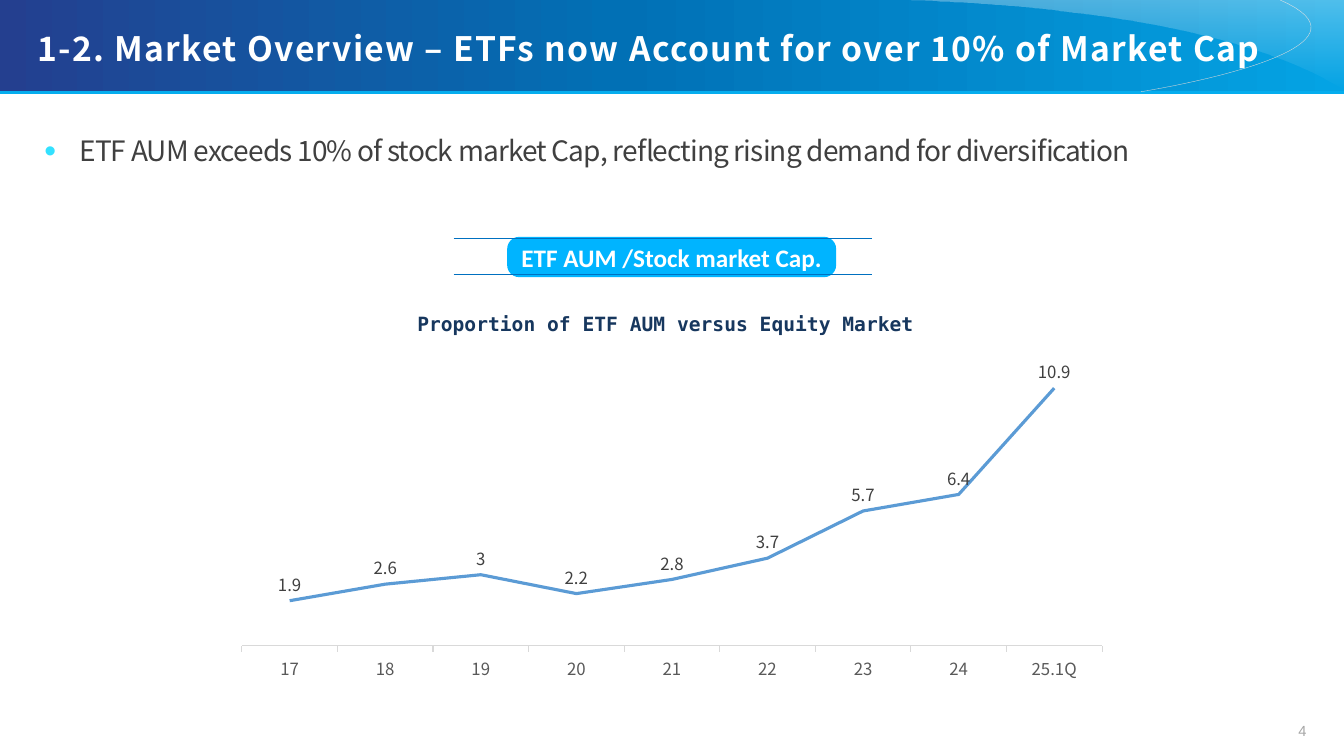
"""Build the market overview slide on ETF assets against stock market capitalisation."""
from typing import NamedTuple

from lxml import etree
from pptx import Presentation
from pptx.chart.data import CategoryChartData
from pptx.dml.color import RGBColor
from pptx.enum.chart import XL_CHART_TYPE, XL_LABEL_POSITION, XL_MARKER_STYLE, XL_TICK_MARK
from pptx.enum.shapes import MSO_CONNECTOR, MSO_SHAPE
from pptx.enum.text import MSO_ANCHOR, PP_ALIGN
from pptx.oxml.ns import qn
from pptx.util import Pt

LINE_CHART = XL_CHART_TYPE.LINE
ABOVE = XL_LABEL_POSITION.ABOVE
NO_MARKER = XL_MARKER_STYLE.NONE
TICK_OUT = XL_TICK_MARK.OUTSIDE
STRAIGHT = MSO_CONNECTOR.STRAIGHT
RECT = MSO_SHAPE.RECTANGLE
ROUNDED = MSO_SHAPE.ROUNDED_RECTANGLE
TOP, MIDDLE = MSO_ANCHOR.TOP, MSO_ANCHOR.MIDDLE
LEFT, CENTER, RIGHT = PP_ALIGN.LEFT, PP_ALIGN.CENTER, PP_ALIGN.RIGHT

SANS = "Noto Sans CJK KR"
COLORS = {
    "white": "FFFFFF", "navy": "243F8F", "blue": "0170B5", "sky": "04A3E4",
    "edge": "05ADEE", "pale": "D9D9D9", "badge": "00B4FF", "rule": "0070C0",
    "heading": "17375E", "body": "404040", "axis": "595959", "series": "5B9BD5",
    "bullet": "33E1FF", "page": "A6A6A6",
}
WIDTH, HEIGHT = 960, 540
SHARE_BY_YEAR = {"17": 1.9, "18": 2.6, "19": 3, "20": 2.2, "21": 2.8,
                 "22": 3.7, "23": 5.7, "24": 6.4, "25.1Q": 10.9}


class Rule(NamedTuple):
    left: float
    right: float
    y: float
    color: str
    weight: float


class Stop(NamedTuple):
    position: int
    color: str
    alpha: int = 100


BANNER_RULES = [Rule(0, WIDTH, 66.2, "edge", 2)]
BADGE_RULES = [Rule(324, 622.8, y, "rule", 0.75) for y in (170.4, 196.4)]


def rgb(name: str) -> RGBColor:
    return RGBColor.from_string(COLORS[name])


def fill_gradient(shape, stops: list[Stop], angle: float) -> None:
    shape.fill.gradient()
    shape.fill.gradient_angle = angle
    stop_list = shape._element.spPr.find(qn("a:gradFill")).find(qn("a:gsLst"))
    for old_stop in list(stop_list):
        stop_list.remove(old_stop)
    for stop in stops:
        gs = etree.SubElement(stop_list, qn("a:gs"), pos=str(stop.position * 1000))
        color = etree.SubElement(gs, qn("a:srgbClr"), val=COLORS[stop.color])
        if stop.alpha < 100:
            etree.SubElement(color, qn("a:alpha"), val=str(stop.alpha * 1000))


def add_rules(slide, rules: list[Rule]) -> None:
    for rule in rules:
        line = slide.shapes.add_connector(STRAIGHT, Pt(rule.left), Pt(rule.y),
                                          Pt(rule.right), Pt(rule.y))
        line.line.color.rgb = rgb(rule.color)
        line.line.width = Pt(rule.weight)
        etree.SubElement(line._element.spPr, qn("a:effectLst"))


def bezier(points: list[tuple[float, float]], steps: int = 40) -> list[tuple[float, float]]:
    curve = []
    for step in range(steps + 1):
        t = step / steps
        weights = ((1 - t) ** 3, 3 * t * (1 - t) ** 2, 3 * t * t * (1 - t), t ** 3)
        curve.append(tuple(sum(w * p[axis] for w, p in zip(weights, points))
                           for axis in (0, 1)))
    return curve


def add_outline(slide, points: list[tuple[float, float]], close: bool):
    start, *rest = [(Pt(x), Pt(y)) for x, y in points]
    builder = slide.shapes.build_freeform(*start, scale=1.0)
    builder.add_line_segments(rest, close=close)
    outline = builder.convert_to_shape()
    outline.shadow.inherit = False
    return outline


def write(shape, text: str, *, size: float, color: str, font: str = SANS,
          bold: bool = False, align=LEFT, anchor=TOP, wrap: bool = True,
          insets: tuple = (0, 0, 0, 0), line_spacing: float = 1.0,
          tracking: float = 0, bullet: str = "", indent: float = 0) -> None:
    frame = shape.text_frame
    frame.word_wrap = wrap
    frame.vertical_anchor = anchor
    (frame.margin_left, frame.margin_top,
     frame.margin_right, frame.margin_bottom) = map(Pt, insets)
    paragraph = frame.paragraphs[0]
    paragraph.alignment = align
    paragraph.line_spacing = line_spacing
    if bullet:
        properties = paragraph._p.get_or_add_pPr()
        properties.set("marL", str(Pt(indent)))
        properties.set("indent", str(-Pt(indent)))
        bullet_color = etree.SubElement(properties, qn("a:buClr"))
        etree.SubElement(bullet_color, qn("a:srgbClr"), val=COLORS["bullet"])
        etree.SubElement(properties, qn("a:buSzPct"), val="120000")
        etree.SubElement(properties, qn("a:buFont"), typeface="Arial")
        etree.SubElement(properties, qn("a:buChar"), char=bullet)
    run = paragraph.add_run()
    run.text = text
    run.font.size = Pt(size)
    run.font.name = font
    run.font.bold = bold
    run.font.color.rgb = rgb(color)
    properties = run._r.get_or_add_rPr()
    etree.SubElement(properties, qn("a:ea"), typeface=font)
    if tracking:
        properties.set("spc", str(round(tracking * 100)))


def add_text(slide, box: tuple, text: str, **style) -> None:
    write(slide.shapes.add_textbox(*map(Pt, box)), text, **style)


def add_banner(slide) -> None:
    banner = slide.shapes.add_shape(RECT, 0, 0, Pt(WIDTH), Pt(65.5))
    banner.shadow.inherit = False
    banner.line.fill.background()
    fill_gradient(banner, [Stop(0, "navy"), Stop(46, "blue"), Stop(100, "sky")], 0)
    add_rules(slide, BANNER_RULES)

    arc = add_outline(slide, bezier([(815, 65.5), (815, 65.5), (998.6, 36.7), (914.4, 0)]), False)
    arc.fill.background()
    arc.line.color.rgb = rgb("pale")
    arc.line.width = Pt(0.25)

    sweep = bezier([(959.4, 64.1), (893.5, 23), (776.9, 5), (640.8, 0)])
    glow = add_outline(slide, [(WIDTH, 0), *sweep], True)
    glow.line.fill.background()
    fill_gradient(glow, [Stop(0, "white", 0), Stop(100, "white", 31)], 90)


def add_badge(slide) -> None:
    badge = slide.shapes.add_shape(ROUNDED, Pt(362.3), Pt(169.2), Pt(235), Pt(28.8))
    badge.adjustments[0] = 0.3
    badge.shadow.inherit = False
    badge.fill.solid()
    badge.fill.fore_color.rgb = rgb("badge")
    badge.line.fill.background()
    write(badge, "ETF AUM /Stock market Cap.", size=18, color="white", font="Calibri",
          bold=True, align=CENTER, anchor=MIDDLE, insets=(7.2, 3.6, 7.2, 3.6))
    add_rules(slide, BADGE_RULES)


def add_share_chart(slide) -> None:
    data = CategoryChartData()
    data.categories = list(SHARE_BY_YEAR)
    data.add_series("Series 1", list(SHARE_BY_YEAR.values()))
    chart = slide.shapes.add_chart(LINE_CHART, Pt(160), Pt(254), Pt(640), Pt(237), data).chart
    chart.has_legend = chart.has_title = False
    chart.font.size = Pt(10)
    chart.font.name = SANS
    years, shares = chart.category_axis, chart.value_axis
    shares.visible = shares.has_major_gridlines = False
    shares.minimum_scale, shares.maximum_scale = 0, 12
    years.major_tick_mark = TICK_OUT
    years.format.line.color.rgb = rgb("pale")
    years.format.line.width = Pt(0.75)
    plot = chart.plots[0]
    plot.vary_by_categories = False
    series = plot.series[0]
    series.smooth = False
    series.marker.style = NO_MARKER
    series.format.line.color.rgb = rgb("series")
    series.format.line.width = Pt(2.25)
    labels = series.data_labels
    labels.show_value = True
    labels.position = ABOVE
    for font, color in ((years.tick_labels.font, "axis"), (labels.font, "body")):
        font.size = Pt(12)
        font.name = SANS
        font.color.rgb = rgb(color)


def main() -> None:
    deck = Presentation()
    deck.slide_width, deck.slide_height = Pt(WIDTH), Pt(HEIGHT)
    slide = deck.slides.add_slide(deck.slide_layouts[6])
    add_text(slide, (920.2, 515.5, 13, 13), "4", size=10.5, color="page", font="Arial",
             align=RIGHT, wrap=False)
    add_banner(slide)
    add_text(slide, (0, 0, WIDTH, 66.2),
             "1-2. Market Overview – ETFs now Account for over 10% of Market Cap",
             size=24, color="white", bold=True, insets=(26.5, 23, 0, 0),
             line_spacing=0.9, tracking=1)
    add_badge(slide)
    add_text(slide, (280, 211, 399.6, 29.5), "Proportion of ETF AUM versus Equity Market",
             size=14, color="heading", font="DejaVu Sans Mono", bold=True, align=CENTER,
             insets=(7.2, 3.6, 15.6, 3.6), line_spacing=1.5)
    add_share_chart(slide)
    add_text(slide, (31.7, 97.9, 918.7, 41),
             "ETF AUM exceeds 10% of stock market Cap, reflecting rising demand for diversification",
             size=20, color="body", line_spacing=0.9, tracking=-0.6, bullet="•", indent=25)
    deck.save("out.pptx")


if __name__ == "__main__":
    main()
